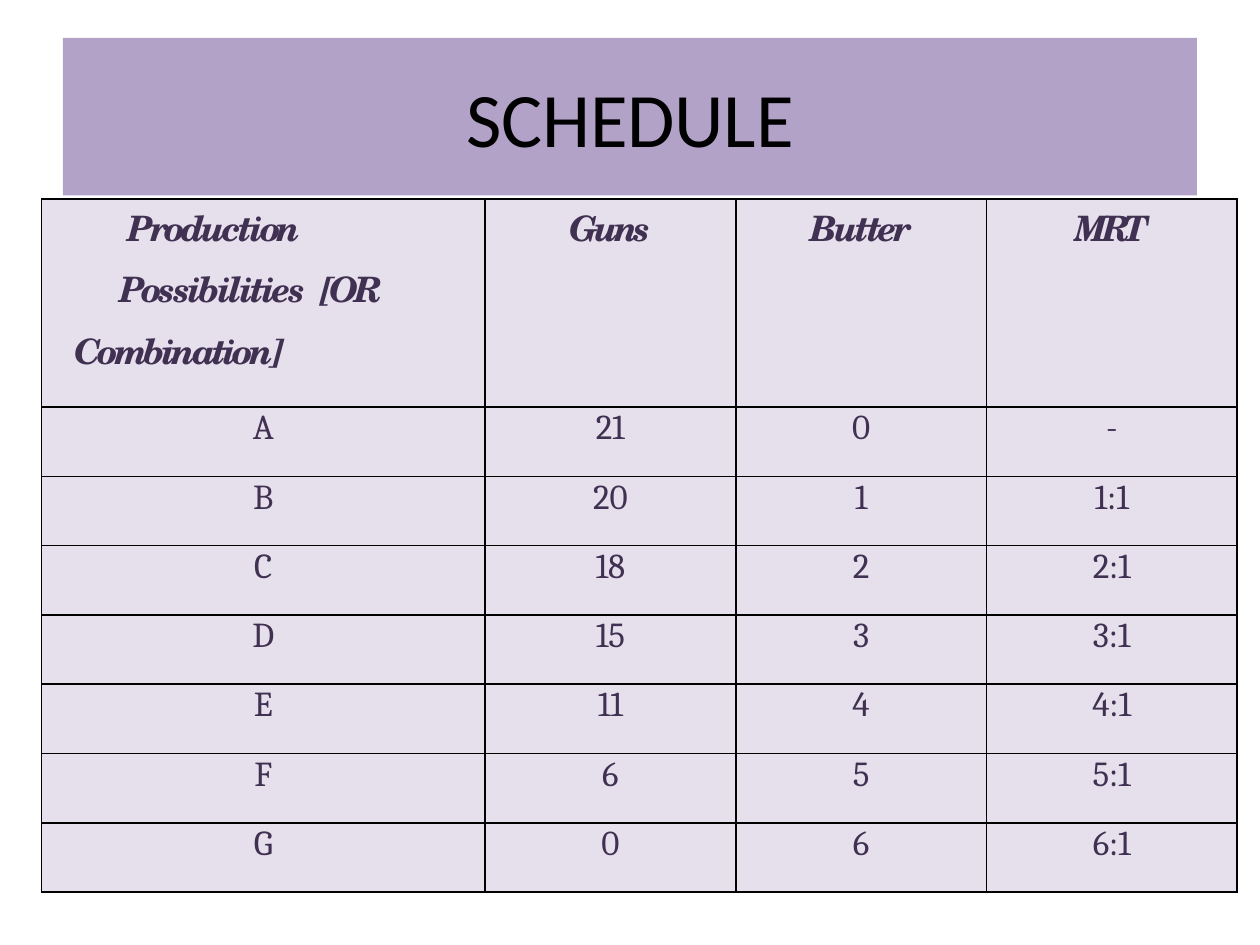
from dataclasses import dataclass

from lxml.etree import SubElement
from pptx import Presentation
from pptx.dml.color import RGBColor as RGB
from pptx.enum.shapes import MSO_SHAPE as SHAPE
from pptx.enum.text import MSO_ANCHOR as ANCHOR, PP_ALIGN as ALIGN
from pptx.oxml.ns import qn
from pptx.util import Inches, Pt


@dataclass(frozen=True)
class Theme:
    banner: RGB = RGB.from_string("B3A2C7")
    cell: RGB = RGB.from_string("E6E0EC")
    ink: RGB = RGB.from_string("403152")
    black: RGB = RGB.from_string("000000")
    title_font: str = "Calibri"
    head_font: str = "TeX Gyre Schola"
    body_font: str = "Cambria"
    title_size: int = 44
    table_size: int = 20
    border: int = 1


class Deck:
    """Draws styled elements on the current slide."""

    def __init__(self, theme, width, height):
        self.theme = theme
        self.prs = Presentation()
        self.prs.slide_width, self.prs.slide_height = Inches(width), Inches(height)
        self.s = self.prs.slides.add_slide(self.prs.slide_layouts[6])

    def add_text(self, p, runs, name, size, color, strong=False):
        for text, spacing in runs:
            r = p.add_run()
            r.text = text
            r._r.get_or_add_rPr().set("spc", str(round(spacing * 100)))
        f = p.font
        f.name, f.size, f.color.rgb = name, Pt(size), color
        f.bold = f.italic = strong

    def banner(self, text, x, y, w, h):
        t = self.theme
        sp = self.s.shapes.add_shape(SHAPE.RECTANGLE, Inches(x), Inches(y), Inches(w), Inches(h))
        sp.shadow.inherit = False
        sp.fill.solid()
        sp.fill.fore_color.rgb = t.banner
        sp.line.fill.background()
        tf = sp.text_frame
        tf.vertical_anchor = ANCHOR.MIDDLE
        p = tf.paragraphs[0]
        p.alignment = ALIGN.CENTER
        self.add_text(p, [(text, -0.1)], t.title_font, t.title_size, t.black)

    def borders(self, cell):
        tc_pr = cell._tc.get_or_add_tcPr()
        for side in ("lnL", "lnR", "lnT", "lnB"):
            ln = SubElement(tc_pr, qn(f"a:{side}"), w=str(Pt(self.theme.border)))
            fill = SubElement(ln, qn("a:solidFill"))
            SubElement(fill, qn("a:srgbClr"), val=str(self.theme.black))

    def cell(self, cell, lines, head):
        t = self.theme
        self.borders(cell)
        cell.fill.solid()
        cell.fill.fore_color.rgb = t.cell
        cell.margin_left = cell.margin_right = cell.margin_bottom = 0
        cell.margin_top = Inches(0.01)
        tf = cell.text_frame
        for i, runs in enumerate(lines):
            p = tf.add_paragraph() if i else tf.paragraphs[0]
            p.alignment = ALIGN.CENTER
            p.space_before = Pt(0 if i else 0.8)
            self.add_text(p, runs, t.head_font if head else t.body_font, t.table_size, t.ink, head)

    def table(self, rows, x, y, widths, heights):
        frame = self.s.shapes.add_table(len(rows), len(widths), Inches(x), Inches(y),
                                        Inches(sum(widths)), Inches(sum(heights)))
        tbl = frame.table
        tbl.first_row = tbl.horz_banding = False
        for column, width in zip(tbl.columns, widths):
            column.width = Inches(width)
        for i, (row, height) in enumerate(zip(rows, heights)):
            tbl.rows[i].height = Inches(height)
            for j, lines in enumerate(row):
                self.cell(tbl.cell(i, j), lines, head=i == 0)
        return tbl

    def indent(self, p, left, first, line_spacing=1.0):
        p.alignment = ALIGN.LEFT
        p.line_spacing = line_spacing
        p_pr = p._p.get_or_add_pPr()
        p_pr.set("marL", str(Inches(left)))
        p_pr.set("indent", str(Inches(first)))


def main():
    deck = Deck(Theme(), 10, 7.5)
    deck.banner("SCHEDULE", 0.5, 0.3, 9, 1.25)

    combination = [[("Production", -1.8)],
                   [("Possibilities  ", -1.5), ("[OR ", -2.7), ("Combination]", -2)]]
    header = [combination, [[("Guns", -2.4)]], [[("Butter", -1.6)]], [[("MRT", -3.3)]]]
    guns = [21, 20, 18, 15, 11, 6, 0]
    schedule = [("ABCDEFG"[butter], str(gun), str(butter), f"{butter}:1" if butter else "-")
                for butter, gun in enumerate(guns)]
    body = [[[[(text, -0.1 if len(text) > 1 else 0)]] for text in row] for row in schedule]

    tbl = deck.table([header] + body, 0.33, 1.58, [3.52] + [1.99] * 3, [1.65] + [0.55] * len(body))
    production, possibilities = tbl.cell(0, 0).text_frame.paragraphs
    deck.indent(production, 0.68, 0)
    deck.indent(possibilities, 0.26, 0.36, 1.15)
    deck.prs.save("out.pptx")


if __name__ == "__main__":
    main()
